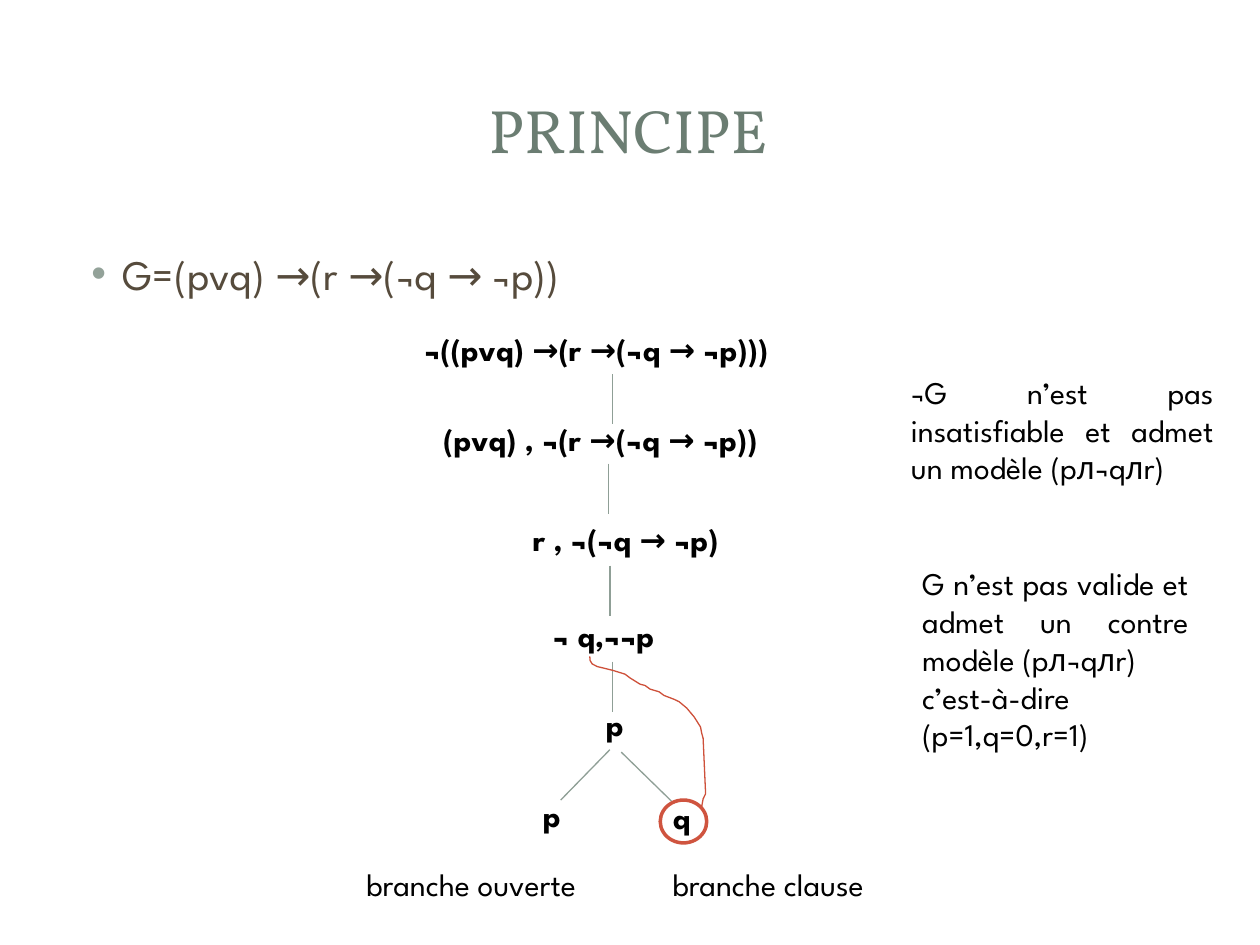
from dataclasses import dataclass

from lxml import etree
from pptx import Presentation
from pptx.dml.color import RGBColor
from pptx.enum import shapes, text
from pptx.oxml import ns
from pptx.util import Pt


@dataclass(frozen=True)
class Theme:
    """Colours, fonts and type sizes of the slide."""
    heading_font: str = "Vollkorn"
    body_font: str = "League Spartan"
    heading: str = "6B7D72"
    formula: str = "564B3C"
    bullet: str = "93A299"
    ink: str = "000000"
    branch: str = "8F9F96"
    ring: str = "CF543F"
    closure: str = "CE503A"
    heading_size: float = 35
    formula_size: float = 24
    text_size: float = 18
    thin: float = 0.75
    thick: float = 2


@dataclass(frozen=True)
class Box:
    """A region of the slide, in points."""
    left: float
    top: float
    width: float
    height: float

    def inner(self, x, y, width, height):
        """Return a box placed relative to this one."""
        return Box(self.left + x, self.top + y, width, height)

    def point(self, x, y):
        """Return the slide position of a point in this box."""
        return Pt(self.left + x), Pt(self.top + y)

    def lengths(self):
        """Return left, top, width and height as slide lengths."""
        return Pt(self.left), Pt(self.top), Pt(self.width), Pt(self.height)


THEME = Theme()
ROW_HEIGHT = 28.8
STEM_LENGTH = 28.6
FORMULAS = [
    ("¬((pvq) →(r →(¬q → ¬p)))", 33.4, 0, 240.5),
    ("(pvq) , ¬(r →(¬q → ¬p))", 44.2, 51.2, 219.6),
    ("r , ¬(¬q → ¬p)", 95.4, 108.8, 133.9),
    ("¬ q,¬¬p", 106.9, 163.5, 81.4),
    ("p", 137.1, 214.6, 26.6),
    ("p", 101.1, 266.4, 26.6),
    ("q", 175.3, 267.2, 26.6),
]
CAPTIONS = [
    ("branche ouverte", 0.3, 306, 164),
    ("branche clause", 175.3, 306, 153.4),
]
STEMS = [(148, 28.8), (145.8, 80), (146.5, 138.2), (148, 193)]
FORKS = [((146.5, 243.4), (118.4, 272.2)), ((153, 244.8), (181.8, 272.9))]
CLOSURE = [
    (199, 275.8), (199.8, 271.5), (201.2, 268.6), (199.8, 236.9), (199, 234),
    (198.3, 230.4), (194.7, 224.7), (190.4, 219.6), (186.1, 216),
    (183.2, 214.6), (177.4, 212.4), (174.6, 210.3), (169.5, 208.8),
    (166.6, 206.7), (163.8, 206), (158, 202.4), (155.1, 200.2), (147.9, 198),
    (139.3, 195.9), (136.4, 194.4), (135.2, 192.5), (135, 190.1),
]


def style(paragraph, font_name, size, color, bold=False):
    """Set the font of a whole paragraph."""
    font = paragraph.font
    font.name, font.size, font.bold = font_name, Pt(size), bold
    font.color.rgb = RGBColor.from_string(color)


def outline(line, color, width):
    """Set the colour and width of a line."""
    line.color.rgb = RGBColor.from_string(color)
    line.width = Pt(width)


def fill_placeholder(placeholder, box, content):
    """Move a placeholder, write its text and return its paragraph."""
    placeholder.left, placeholder.top, placeholder.width, placeholder.height = box.lengths()
    frame = placeholder.text_frame
    frame.text = content
    frame.auto_size = text.MSO_AUTO_SIZE.NONE
    return frame.paragraphs[0]


def add_title(slide, box):
    """Write the centred heading."""
    paragraph = fill_placeholder(slide.shapes.title, box, "PRINCIPE")
    paragraph.alignment = text.PP_ALIGN.CENTER
    style(paragraph, THEME.heading_font, THEME.heading_size, THEME.heading)
    slide.shapes.title.text_frame.vertical_anchor = text.MSO_ANCHOR.MIDDLE


def add_formula(slide, box):
    """Write the bulleted formula G."""
    paragraph = fill_placeholder(slide.placeholders[1], box, "G=(pvq) →(r →(¬q → ¬p))")
    style(paragraph, THEME.body_font, THEME.formula_size, THEME.formula)
    paragraph.space_before = Pt(0.2 * THEME.formula_size)
    properties = paragraph._p.get_or_add_pPr()
    properties.set("marL", str(Pt(27)))
    properties.set("indent", str(Pt(-18)))
    bullet_color = etree.Element(ns.qn("a:buClr"))
    etree.SubElement(bullet_color, ns.qn("a:srgbClr"), val=THEME.bullet)
    bullet = etree.Element(ns.qn("a:buChar"), char="•")
    position = list(properties).index(properties.find(ns.qn("a:spcBef"))) + 1
    properties[position:position] = [bullet_color, bullet]


def add_text(slide, box, paragraphs, bold=False, justified=False):
    """Write paragraphs in a text box, wrapped only when justified."""
    frame = slide.shapes.add_textbox(*box.lengths()).text_frame
    frame.word_wrap = justified
    frame.auto_size = text.MSO_AUTO_SIZE.SHAPE_TO_FIT_TEXT
    frame.text = "\n".join(paragraphs)
    for paragraph in frame.paragraphs:
        style(paragraph, THEME.body_font, THEME.text_size, THEME.ink, bold)
        if justified:
            paragraph.alignment = text.PP_ALIGN.JUSTIFY


def add_branch(slide, start, end):
    """Draw one straight branch of the tree."""
    branch = slide.shapes.add_connector(shapes.MSO_CONNECTOR.STRAIGHT, *start, *end)
    outline(branch.line, THEME.branch, THEME.thin)
    etree.SubElement(branch._element.spPr, ns.qn("a:effectLst"))


def add_closure(slide, box):
    """Ring the leaf q and join it to the formula it contradicts."""
    ring = slide.shapes.add_shape(
        shapes.MSO_SHAPE.OVAL, *box.inner(175.3, 272.2, 26.6, 24.5).lengths())
    start, *rest = [box.point(x, y) for x, y in CLOSURE]
    builder = slide.shapes.build_freeform(*start)
    builder.add_line_segments(rest, close=False)
    link = builder.convert_to_shape()
    for mark, color, width in ((ring, THEME.ring, THEME.thick),
                               (link, THEME.closure, THEME.thin)):
        mark.shadow.inherit = False
        mark.fill.background()
        outline(mark.line, color, width)


def add_tree(slide, box):
    """Draw the semantic tree with its captions."""
    for rows, bold in ((FORMULAS, True), (CAPTIONS, False)):
        for content, x, y, width in rows:
            add_text(slide, box.inner(x, y, width, ROW_HEIGHT), [content], bold)
    stems = [((x, y), (x, y + STEM_LENGTH)) for x, y in STEMS]
    for start, end in stems + FORKS:
        add_branch(slide, box.point(*start), box.point(*end))
    add_closure(slide, box)


def add_conclusions(slide, box):
    """Write the two conclusions beside the tree."""
    add_text(slide, box.inner(0, 0, box.width, 94.3),
             ["¬G n’est pas insatisfiable et admet un modèle (pл¬qлr)"], justified=True)
    add_text(slide, box.inner(6.5, 109.4, 166.3, 138.2),
             ["G n’est pas valide et admet un contre modèle (pл¬qлr)",
              "c’est-à-dire (p=1,q=0,r=1)"], justified=True)


def main():
    """Build the slide and save it."""
    deck = Presentation()
    deck.slide_width, deck.slide_height = Pt(720), Pt(540)
    slide = deck.slides.add_slide(deck.slide_layouts[1])
    add_title(slide, Box(33.8, 32.4, 650.2, 82.1))
    add_formula(slide, Box(36, 138.2, 648, 41))
    add_tree(slide, Box(202, 185, 329, 335))
    add_conclusions(slide, Box(513.4, 209.5, 187.2, 247.6))
    deck.save("out.pptx")


if __name__ == "__main__":
    main()
